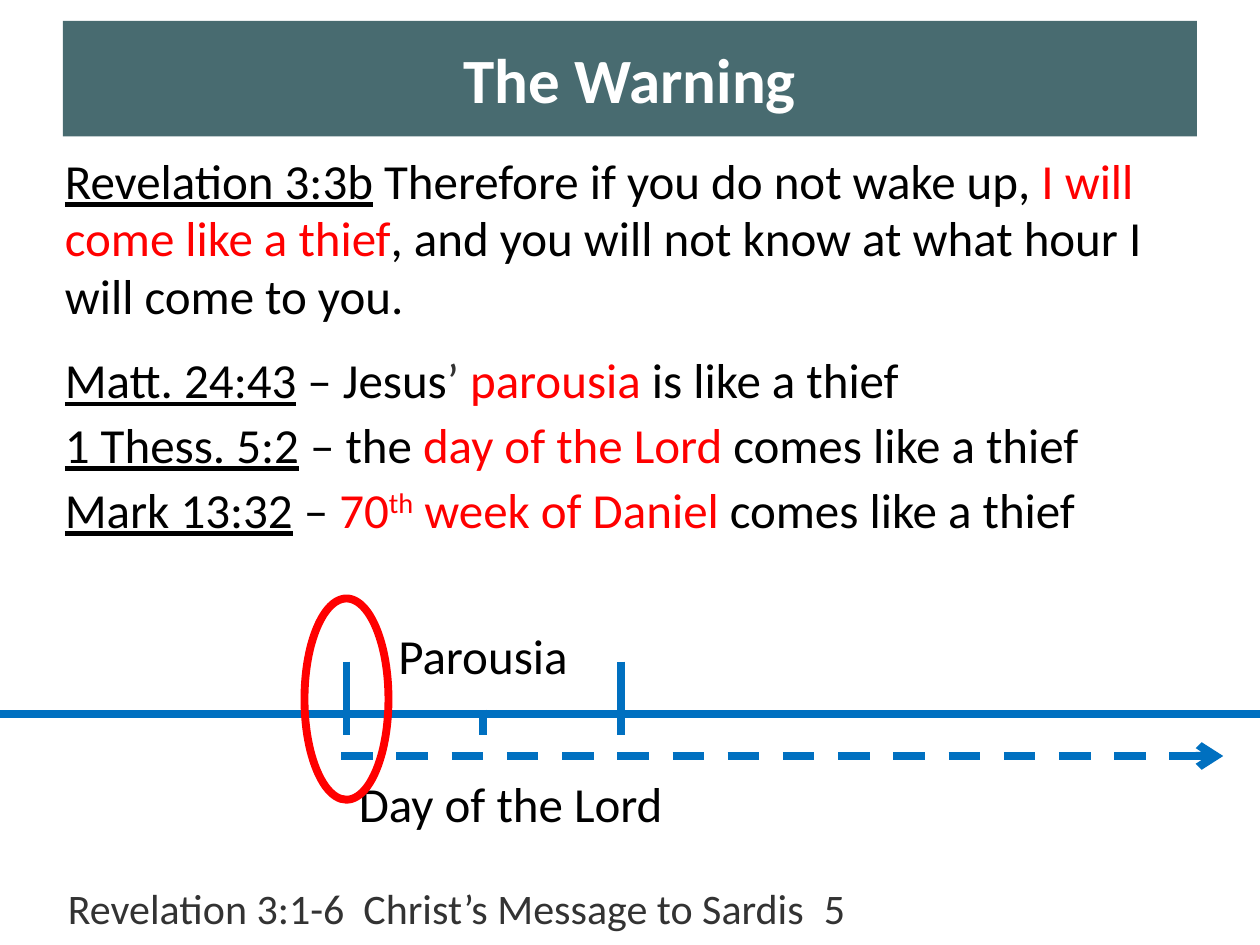
from dataclasses import dataclass

import pptx
import pptx.dml.color
import pptx.enum.dml
import pptx.enum.shapes
import pptx.enum.text
import pptx.oxml
import pptx.oxml.ns
import pptx.util
from pptx.util import Pt

RGBColor = pptx.dml.color.RGBColor
Align = pptx.enum.text.PP_ALIGN
Anchor = pptx.enum.text.MSO_ANCHOR
Shape = pptx.enum.shapes.MSO_SHAPE

BLACK = RGBColor(0x00, 0x00, 0x00)
WHITE = RGBColor(0xFF, 0xFF, 0xFF)
GRAY = RGBColor(0x33, 0x33, 0x33)
RED = RGBColor(0xFF, 0x00, 0x00)
BLUE = RGBColor(0x00, 0x70, 0xC0)
TEAL = RGBColor(0x48, 0x6B, 0x70)
FONT = "Calibri"
STROKE = Pt(4.5)


@dataclass(frozen=True)
class Box:
    left: float
    top: float
    width: float
    height: float

    def points(self) -> tuple:
        return Pt(self.left), Pt(self.top), Pt(self.width), Pt(self.height)


@dataclass(frozen=True)
class Phrase:
    text: str
    color: RGBColor = BLACK
    under: bool = False
    raised: bool = False


@dataclass(frozen=True)
class Verse:
    phrases: tuple
    before: float = 4


@dataclass(frozen=True)
class Tick:
    x: float
    top: float


VERSES = (
    Verse((
        Phrase("Revelation 3:3b", under=True),
        Phrase(" Therefore if you do not wake up,"),
        Phrase(" I will come like a thief", RED),
        Phrase(", and you will not know at what hour I will come to you."),
    )),
    Verse((
        Phrase("Matt. 24:43", under=True),
        Phrase(" – Jesus"),
        Phrase("’ ", GRAY),
        Phrase("parousia ", RED),
        Phrase("is like a thief"),
    ), before=15.3),
    Verse((
        Phrase("1 Thess. 5:2", under=True),
        Phrase(" – the "),
        Phrase("day of the Lord ", RED),
        Phrase("comes like a thief"),
    )),
    Verse((
        Phrase("Mark 13:32", under=True),
        Phrase(" – "),
        Phrase("70", RED),
        Phrase("th", RED, raised=True),
        Phrase(" week of Daniel ", RED),
        Phrase("comes like a thief"),
    )),
)

TICKS = (Tick(198, 378), Tick(276, 405.5), Tick(355, 378))
TICK_END = 420
AXIS_Y = 408


def set_font(par, size: float, color: RGBColor, bold: bool = False) -> None:
    font = par.font
    font.name, font.size, font.bold = FONT, Pt(size), bold
    font.color.rgb = color


def add_text(slide, box: Box, text: str, size: float, color: RGBColor = BLACK,
             align=Align.LEFT, anchor=Anchor.TOP) -> None:
    frame = slide.shapes.add_textbox(*box.points()).text_frame
    frame.word_wrap = True
    frame.vertical_anchor = anchor
    par = frame.paragraphs[0]
    par.text, par.alignment = text, align
    set_font(par, size, color)


def add_title(slide, box: Box, text: str) -> None:
    bar = slide.shapes.add_shape(Shape.RECTANGLE, *box.points())
    bar.shadow.inherit = False
    bar.fill.solid()
    bar.fill.fore_color.rgb = TEAL
    bar.line.fill.background()
    bar.text_frame.vertical_anchor = Anchor.MIDDLE
    par = bar.text_frame.paragraphs[0]
    par.text, par.alignment = text, Align.CENTER
    set_font(par, 36, WHITE, bold=True)


def add_verses(slide, box: Box) -> None:
    frame = slide.shapes.add_textbox(*box.points()).text_frame
    frame.word_wrap = True
    for i, verse in enumerate(VERSES):
        par = frame.add_paragraph() if i else frame.paragraphs[0]
        par.space_before = Pt(verse.before)
        par.line_spacing = 0.98
        par.font.name, par.font.size = FONT, Pt(28)
        for phrase in verse.phrases:
            run = par.add_run()
            run.text = phrase.text
            run.font.color.rgb = phrase.color
            run.font.underline = phrase.under
            if phrase.raised:
                run.font._element.set("baseline", "30000")


def add_line(slide, x1: float, y1: float, x2: float, y2: float):
    line = slide.shapes.add_connector(
        pptx.enum.shapes.MSO_CONNECTOR.STRAIGHT, Pt(x1), Pt(y1), Pt(x2), Pt(y2))
    line.line.color.rgb = BLUE
    line.line.width = STROKE
    props = line._element.spPr
    props.append(pptx.oxml.parse_xml(
        f"<a:effectLst {pptx.oxml.ns.nsdecls('a')}/>"))
    return line


def add_arrow(slide, x1: float, x2: float, y: float) -> None:
    """Draw a dashed arrow that points right."""
    line = add_line(slide, x1, y, x2, y).line
    line.dash_style = pptx.enum.dml.MSO_LINE.DASH
    line._ln.append(pptx.oxml.parse_xml(
        f"<a:tailEnd {pptx.oxml.ns.nsdecls('a')} type='arrow'/>"))


def add_ring(slide, box: Box) -> None:
    ring = slide.shapes.add_shape(Shape.OVAL, *box.points())
    ring.shadow.inherit = False
    ring.fill.background()
    ring.line.color.rgb = RED
    ring.line.width = STROKE


def main() -> None:
    deck = pptx.Presentation()
    deck.slide_width, deck.slide_height = Pt(720), Pt(540)
    slide = deck.slides.add_slide(deck.slide_layouts[6])

    add_text(slide, Box(31.7, 505.5, 658.8, 26.6),
             "Revelation 3:1-6  Christ’s Message to Sardis\t5",
             24, GRAY, anchor=Anchor.MIDDLE)
    add_verses(slide, Box(30, 84, 666, 402))
    add_title(slide, Box(36, 12, 648, 66), "The Warning")

    add_text(slide, Box(183, 354, 186, 41), "Parousia", 28, align=Align.CENTER)
    add_line(slide, 0, AXIS_Y, 720, AXIS_Y)
    for tick in TICKS:
        add_line(slide, tick.x, tick.top, tick.x, TICK_END)
    add_arrow(slide, 195, 699, 432)
    add_text(slide, Box(198, 438.5, 288, 41), "Day of the Lord", 28)
    add_ring(slide, Box(174, 342, 48, 115))

    deck.save("out.pptx")


if __name__ == "__main__":
    main()
